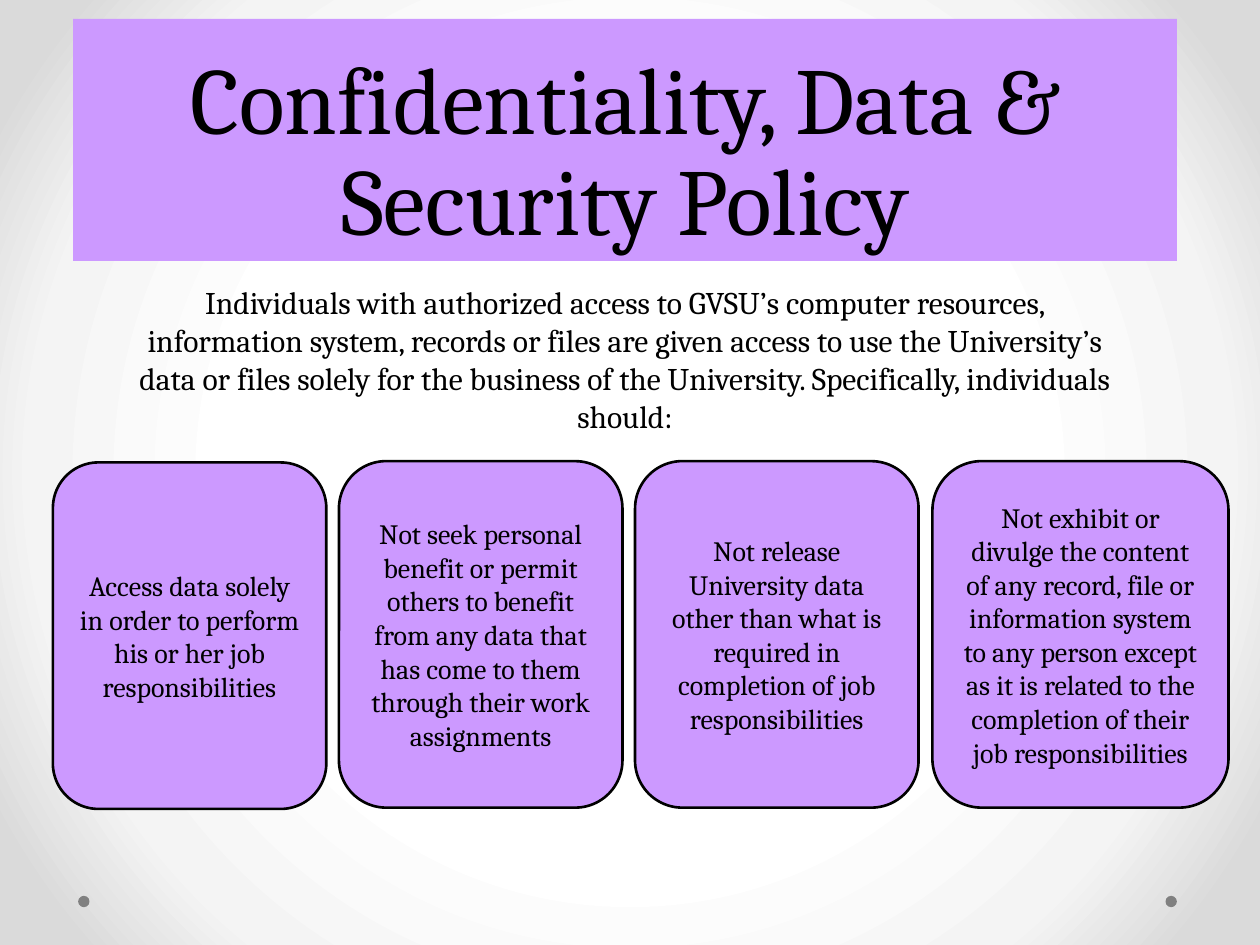
from pptx import Presentation
from pptx.dml.color import RGBColor
from pptx.enum.shapes import MSO_SHAPE
from pptx.enum.text import MSO_ANCHOR, MSO_AUTO_SIZE, PP_ALIGN
from pptx.oxml import parse_xml
from pptx.oxml.ns import nsdecls
from pptx.util import Inches, Pt

COLORS = {"lilac": "CC99FF", "black": "000000", "dot": "808080"}
BACKDROP = [(50, "FFFFFF"), (76, "F4F4F4"), (92, "DADADA")]


class PolicySlide:
    font = "Cambria"

    def __init__(self, prs):
        self.s = prs.slides.add_slide(prs.slide_layouts[5])

    def color(self, name):
        return RGBColor.from_string(COLORS[name])

    def background(self, stops):
        gs = "".join(f'<a:gs pos="{pos * 1000}"><a:srgbClr val="{rgb}"/></a:gs>'
                     for pos, rgb in stops)
        bg = parse_xml(
            f'<p:bg {nsdecls("p", "a")}><p:bgPr><a:gradFill rotWithShape="1">'
            f'<a:gsLst>{gs}</a:gsLst><a:path path="circle">'
            '<a:fillToRect l="50000" t="50000" r="50000" b="50000"/></a:path>'
            '</a:gradFill><a:effectLst/></p:bgPr></p:bg>')
        self.s.element.cSld.insert(0, bg)

    def fill(self, sp, name):
        sp.fill.solid()
        sp.fill.fore_color.rgb = self.color(name)

    def set_text(self, sp, text, size, anchor, spacing=None):
        tf = sp.text_frame
        frame = {"word_wrap": True, "auto_size": MSO_AUTO_SIZE.NONE,
                 "vertical_anchor": anchor}
        for key, value in frame.items():
            setattr(tf, key, value)
        p = tf.paragraphs[0]
        p.alignment = PP_ALIGN.CENTER
        if spacing:
            p.line_spacing = Pt(spacing)
        r = p.add_run()
        r.text = text
        for key, value in {"name": self.font, "size": Pt(size)}.items():
            setattr(r.font, key, value)
        r.font.color.rgb = self.color("black")

    def title(self, text, box):
        sp = self.s.shapes.title
        for key, value in zip(("left", "top", "width", "height"), box):
            setattr(sp, key, Inches(value))
        self.fill(sp, "lilac")
        self.set_text(sp, text, 54, MSO_ANCHOR.BOTTOM, spacing=58)

    def text(self, text, box):
        sp = self.s.shapes.add_textbox(*map(Inches, box))
        self.set_text(sp, text, 18, MSO_ANCHOR.TOP)

    def shape(self, kind, box, fill):
        sp = self.s.shapes.add_shape(kind, *map(Inches, box))
        sp.shadow.inherit = False
        self.fill(sp, fill)
        sp.line.fill.background()
        return sp

    def dot(self, left):
        self.shape(MSO_SHAPE.OVAL, (left, 7.11, 0.09, 0.09), "dot")

    def card(self, text, box):
        sp = self.shape(MSO_SHAPE.ROUNDED_RECTANGLE, box, "lilac")
        sp.line.color.rgb = self.color("black")
        sp.line.width = Pt(1.5)
        self.set_text(sp, text, 16, MSO_ANCHOR.MIDDLE)


def main():
    prs = Presentation()
    prs.slide_width, prs.slide_height = Inches(10), Inches(7.5)
    slide = PolicySlide(prs)

    # Backdrop and corner dots
    slide.background(BACKDROP)
    for left in (9.25, 0.62):
        slide.dot(left)

    # Title and introduction
    slide.title("Confidentiality, Data & Security Policy", (0.58, 0.15, 8.76, 1.92))
    slide.text("Individuals with authorized access to GVSU’s computer resources, "
               "information system, records or files are given access to use the "
               "University’s data or files solely for the business of the "
               "University. Specifically, individuals should:",
               (0.92, 2.2, 8.08, 1.4))

    # Row of duties: left, top, width, text
    duties = [
        (0.42, 3.67, 2.17, "Access data solely in order to perform his or her job "
                           "responsibilities"),
        (2.69, 3.66, 2.25, "Not seek personal benefit or permit others to benefit "
                           "from any data that has come to them through their work "
                           "assignments"),
        (5.04, 3.66, 2.25, "Not release University data other than what is required "
                           "in completion of job responsibilities"),
        (7.4, 3.66, 2.35, "Not exhibit or divulge the content of any record, file or "
                          "information system to any person except as it is related "
                          "to the completion of their job responsibilities"),
    ]
    for left, top, width, text in duties:
        slide.card(text, (left, top, width, 2.75))

    prs.save("out.pptx")


if __name__ == "__main__":
    main()
